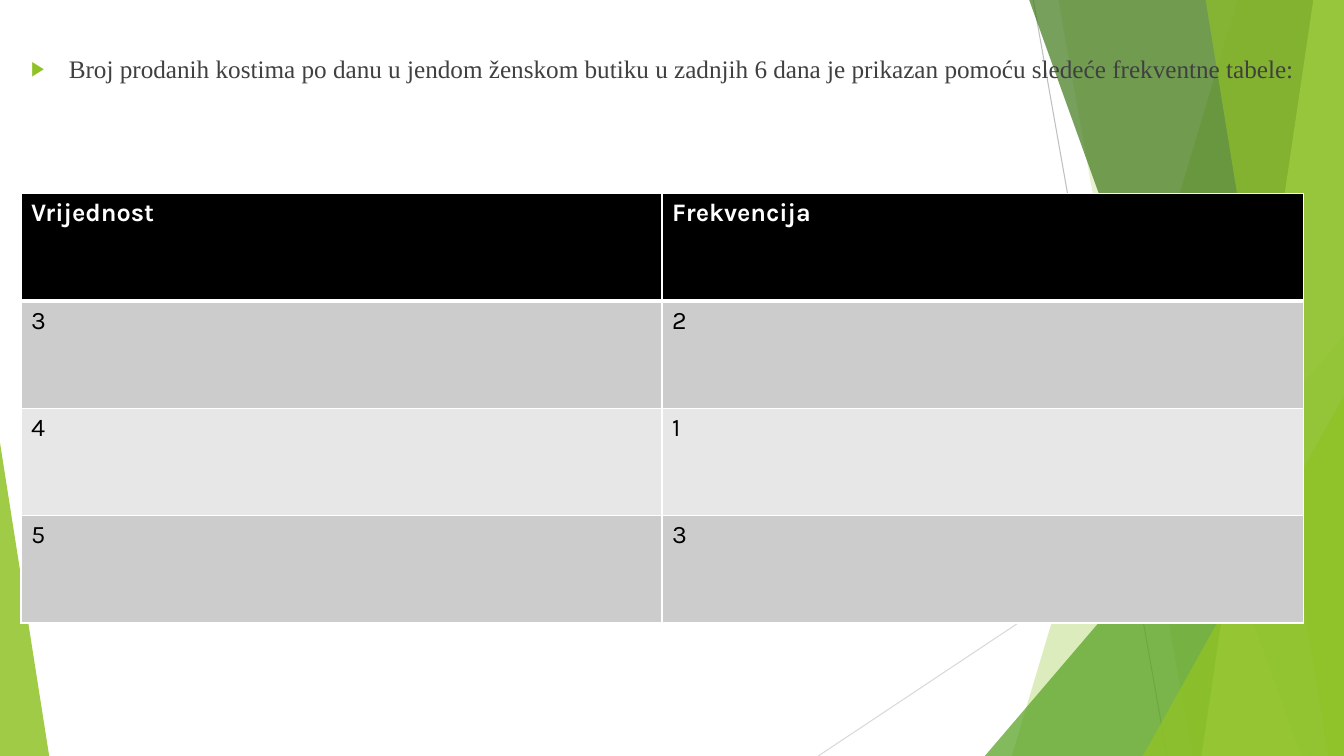
import pptx
import pptx.util
import pptx.dml.color
import pptx.enum.shapes
import pptx.enum.text
import pptx.oxml
import pptx.oxml.ns
from pptx.util import Cm, Pt

WIDTH, HEIGHT = 33.87, 19.05
BLEED_TOP = -0.02
INTRO = ("Broj prodanih kostima po danu u jendom ženskom butiku u zadnjih 6 dana "
         "je prikazan pomoću sledeće frekventne tabele:")
INTRO_BOX = (0.53, 0.84, 33.34, 17.45)
INTRO_FONT = {"name": "Times New Roman", "size": Pt(18)}
HANGING = 0.95

FREQUENCIES = [("Vrijednost", "Frekvencija"), ("3", "2"), ("4", "1"), ("5", "3")]
TABLE_BOX = (0.53, 4.88, 32.31, 10.82)
ROW_FILLS = ["000000", "CCCCCC", "E7E7E7", "CCCCCC"]
HEADER_FONT = {"name": "Karla", "size": Pt(18), "bold": True}
VALUE_FONT = {"name": "Karla", "size": Pt(18), "bold": False}

RAYS = [
    ((26.04, 0, 29.41, HEIGHT), "BFBFBF"),
    ((WIDTH, 10.24, 20.62, HEIGHT), "D9D9D9"),
]
FACETS = [
    ("band", (31.19, 25.5), "90C226", 30),
    ("band", (26.67, 30.05), "90C226", 20),
    ("triangle", (24.82, 8.46, 9.05, 1), "54A021", 72),
    ("band", (25.93, 32.79), "3F7819", 70),
    ("band", (33.1, 30.28), "C0E474", 70),
    ("band", (30.38, 33.48), "90C226", 65),
    ("triangle", (28.8, 9.98, 5.07, 1), "90C226", 80),
    ("triangle", (0, 11.15, 1.24, 0), "90C226", 85),
]


def colour(value):
    return pptx.dml.color.RGBColor.from_string(value)


def add_xml(parent, tag, content="", **attributes):
    listed = "".join(f' {name}="{value}"' for name, value in attributes.items())
    namespace = pptx.oxml.ns.nsdecls("a")
    parent.append(pptx.oxml.parse_xml(f"<a:{tag} {namespace}{listed}>{content}</a:{tag}>"))


def format_font(font, settings, value):
    for name, setting in settings.items():
        setattr(font, name, setting)
    font.color.rgb = colour(value)


def add_ray(page, ends, value):
    ray = page.shapes.add_connector(
        pptx.enum.shapes.MSO_CONNECTOR.STRAIGHT, *map(Cm, ends))
    ray.line.color.rgb = colour(value)
    ray.line.width = Pt(0.75)
    add_xml(ray._element.spPr, "effectLst")


def add_facet(page, kind, geometry, value, opacity):
    if kind == "band":
        top_x, bottom_x = geometry
        outline = page.shapes.build_freeform(Cm(top_x), Cm(BLEED_TOP))
        corners = [(WIDTH, BLEED_TOP), (WIDTH, HEIGHT), (bottom_x, HEIGHT)]
        outline.add_line_segments([(Cm(x), Cm(y)) for x, y in corners], close=True)
        facet = outline.convert_to_shape()
    else:
        left, top, width, apex = geometry
        facet = page.shapes.add_shape(
            pptx.enum.shapes.MSO_SHAPE.ISOSCELES_TRIANGLE,
            *map(Cm, (left, top, width, HEIGHT - top)))
        facet.adjustments[0] = apex
    facet.shadow.inherit = False
    facet.line.fill.background()
    facet.fill.solid()
    facet.fill.fore_color.rgb = colour(value)
    shade = facet._element.spPr.find(".//" + pptx.oxml.ns.qn("a:srgbClr"))
    add_xml(shade, "alpha", val=opacity * 1000)


def fill_intro(page, box):
    page.shapes._spTree.append(box._element)
    for name, length in zip(("left", "top", "width", "height"), INTRO_BOX):
        setattr(box, name, Cm(length))
    frame = box.text_frame
    frame.word_wrap = True
    frame.auto_size = pptx.enum.text.MSO_AUTO_SIZE.NONE
    frame.vertical_anchor = pptx.enum.text.MSO_ANCHOR.TOP
    para = frame.paragraphs[0]
    para.line_spacing = 1.5
    para.space_before = Pt(10)
    span = para.add_run()
    span.text = INTRO
    format_font(span.font, INTRO_FONT, "404040")
    properties = para._p.get_or_add_pPr()
    properties.set("marL", str(Cm(HANGING)))
    properties.set("indent", str(-Cm(HANGING)))
    add_xml(properties, "buClr", '<a:srgbClr val="90C226"/>')
    add_xml(properties, "buSzPct", val=80000)
    add_xml(properties, "buFont", typeface="Arial")
    add_xml(properties, "buChar", char="▶")


def add_frequency_table(page):
    table = page.shapes.add_table(
        len(FREQUENCIES), len(FREQUENCIES[0]), *map(Cm, TABLE_BOX)).table
    for row, values in enumerate(FREQUENCIES):
        font, ink = (VALUE_FONT, "000000") if row else (HEADER_FONT, "FFFFFF")
        for column, value in enumerate(values):
            cell = table.cell(row, column)
            span = cell.text_frame.paragraphs[0].add_run()
            span.text = value
            format_font(span.font, font, ink)
            for side in "LRTB":
                thick = (row, side) in ((0, "B"), (1, "T"))
                add_xml(cell._tc.get_or_add_tcPr(), f"ln{side}",
                        '<a:solidFill><a:srgbClr val="FFFFFF"/></a:solidFill>',
                        w=Pt(3 if thick else 1))
            cell.fill.solid()
            cell.fill.fore_color.rgb = colour(ROW_FILLS[row])


def main():
    deck = pptx.Presentation()
    deck.slide_width, deck.slide_height = Cm(WIDTH), Cm(HEIGHT)
    page = deck.slides.add_slide(deck.slide_layouts[1])
    title = page.shapes.title._element
    title.getparent().remove(title)
    page.background.fill.solid()
    page.background.fill.fore_color.rgb = colour("FFFFFF")
    for ray in RAYS:
        add_ray(page, *ray)
    for facet in FACETS:
        add_facet(page, *facet)
    fill_intro(page, page.placeholders[1])
    add_frequency_table(page)
    deck.save("out.pptx")


if __name__ == "__main__":
    main()
